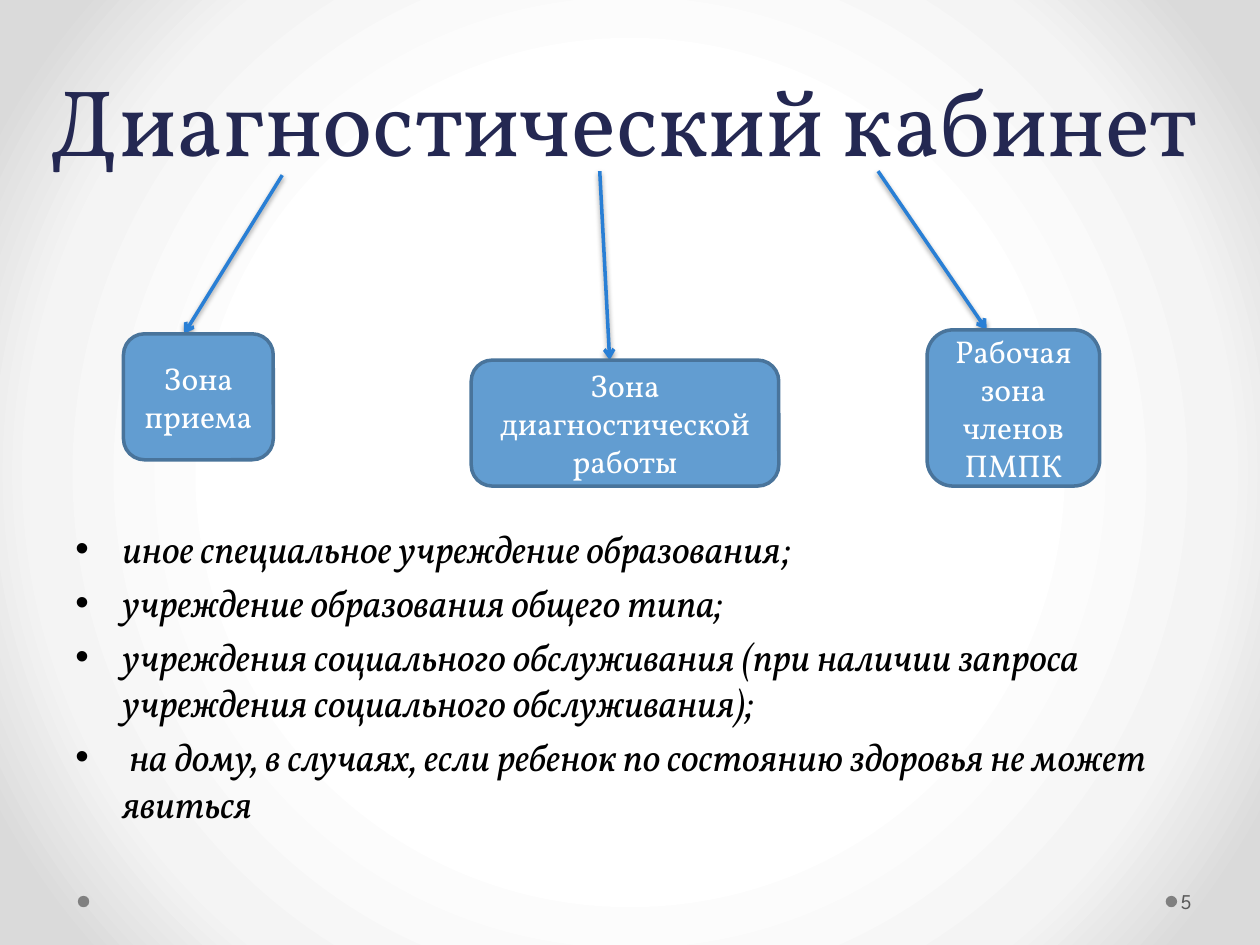
from lxml import etree
from pptx import Presentation, util as u
from pptx.dml.color import RGBColor
from pptx.enum import shapes, text
from pptx.oxml import parse_xml
from pptx.oxml.ns import nsdecls, qn

COLORS = {
    "title": "242852", "body": "000000", "number": "595959", "dot": "808080",
    "arrow": "297FD5", "zone": "629DD1", "border": "49749B", "label": "FFFFFF",
}
SERIF = "Vollkorn"


def add_run(paragraph, words, size, color, font=SERIF):
    run = paragraph.add_run()
    run.text = words
    run.font.name = font
    run.font.size = u.Pt(size)
    run.font.color.rgb = RGBColor.from_string(COLORS[color])
    return run


def add_text_frame(slide, box, anchor):
    frame = slide.shapes.add_textbox(*map(u.Cm, box)).text_frame
    frame.word_wrap = True
    frame.vertical_anchor = anchor
    return frame


presentation = Presentation()
presentation.slide_width, presentation.slide_height = u.Cm(25.4), u.Cm(19.05)
slide = presentation.slides.add_slide(presentation.slide_layouts[6])

slide.background.fill.gradient()
gradient = slide.background._cSld.find(".//" + qn("a:gradFill"))
stops = "".join(
    f'<a:gs pos="{percent * 1000}"><a:srgbClr val="{color}"/></a:gs>'
    for percent, color in [(50, "FFFFFF"), (76, "F4F4F4"), (92, "DADADA")]
)
gradient.getparent().replace(gradient, parse_xml(
    f'<a:gradFill {nsdecls("a")} rotWithShape="1"><a:gsLst>{stops}</a:gsLst>'
    '<a:path path="circle"><a:fillToRect l="50000" t="50000" r="50000" b="50000"/>'
    '</a:path></a:gradFill>'
))

for left in (23.5, 1.57):
    dot = slide.shapes.add_shape(
        shapes.MSO_SHAPE.OVAL, u.Cm(left), u.Cm(18.06), u.Cm(0.23), u.Cm(0.23))
    dot.shadow.inherit = False
    dot.fill.solid()
    dot.fill.fore_color.rgb = RGBColor.from_string(COLORS["dot"])
    dot.line.fill.background()

title = add_text_frame(slide, (0.51, 0.74, 24.13, 2.92), text.MSO_ANCHOR.BOTTOM)
paragraph = title.paragraphs[0]
paragraph.alignment = text.PP_ALIGN.CENTER
paragraph.line_spacing = u.Pt(58)
add_run(paragraph, "Диагностический кабинет", 54, "title")

places = [
    "иное специальное учреждение образования;",
    "учреждение образования общего типа;",
    "учреждения социального обслуживания (при наличии запроса учреждения социального обслуживания);",
    " на дому, в случаях, если ребенок по состоянию здоровья не может явиться",
]
body = add_text_frame(slide, (1.27, 10.46, 22.86, 6.56), text.MSO_ANCHOR.TOP)
for index, place in enumerate(places):
    paragraph = body.add_paragraph() if index else body.paragraphs[0]
    paragraph.space_after = u.Pt(4.5)
    add_run(paragraph, place, 22, "body").font.italic = True
    properties = paragraph._p.get_or_add_pPr()
    properties.set("marL", str(u.Cm(0.95)))
    properties.set("indent", str(-u.Cm(0.95)))
    etree.SubElement(properties, qn("a:buFont")).set("typeface", "Arial")
    etree.SubElement(properties, qn("a:buChar")).set("char", "•")

number = add_text_frame(slide, (23.72, 17.65, 1.55, 1.02), text.MSO_ANCHOR.MIDDLE)
number.margin_left = u.Cm(0.08)
number.margin_right = u.Cm(0.13)
add_run(number.paragraphs[0], "5", 12, "number", "League Spartan")

arrows = [
    (12.09, 3.45, 12.29, 7.26),
    (5.69, 3.53, 3.71, 6.73),
    (17.7, 3.45, 19.89, 6.65),
]
for ends in arrows:
    arrow = slide.shapes.add_connector(shapes.MSO_CONNECTOR.STRAIGHT, *map(u.Cm, ends))
    arrow.line.color.rgb = RGBColor.from_string(COLORS["arrow"])
    arrow.line.width = u.Pt(2)
    etree.SubElement(arrow.line._get_or_add_ln(), qn("a:tailEnd")).set("type", "arrow")
    arrow._element.spPr.append(parse_xml(
        f'<a:effectLst {nsdecls("a")}><a:outerShdw blurRad="{u.Pt(3.1)}" '
        f'dist="{u.Pt(1.6)}" dir="5400000" rotWithShape="0"><a:srgbClr val="000000">'
        '<a:alpha val="38000"/></a:srgbClr></a:outerShdw></a:effectLst>'
    ))

zones = [
    ("Зона приема", (2.49, 6.73, 3.02, 2.54)),
    ("Зона диагностической работы", (9.5, 7.26, 6.2, 2.54)),
    ("Рабочая зона членов ПМПК", (18.69, 6.65, 3.48, 3.15)),
]
for label, box in zones:
    zone = slide.shapes.add_shape(shapes.MSO_SHAPE.ROUNDED_RECTANGLE, *map(u.Cm, box))
    zone.shadow.inherit = False
    zone.fill.solid()
    zone.fill.fore_color.rgb = RGBColor.from_string(COLORS["zone"])
    zone.line.color.rgb = RGBColor.from_string(COLORS["border"])
    zone.line.width = u.Pt(2)
    zone.text_frame.word_wrap = True
    zone.text_frame.vertical_anchor = text.MSO_ANCHOR.MIDDLE
    paragraph = zone.text_frame.paragraphs[0]
    paragraph.alignment = text.PP_ALIGN.CENTER
    add_run(paragraph, label, 18, "label")

presentation.save("out.pptx")
